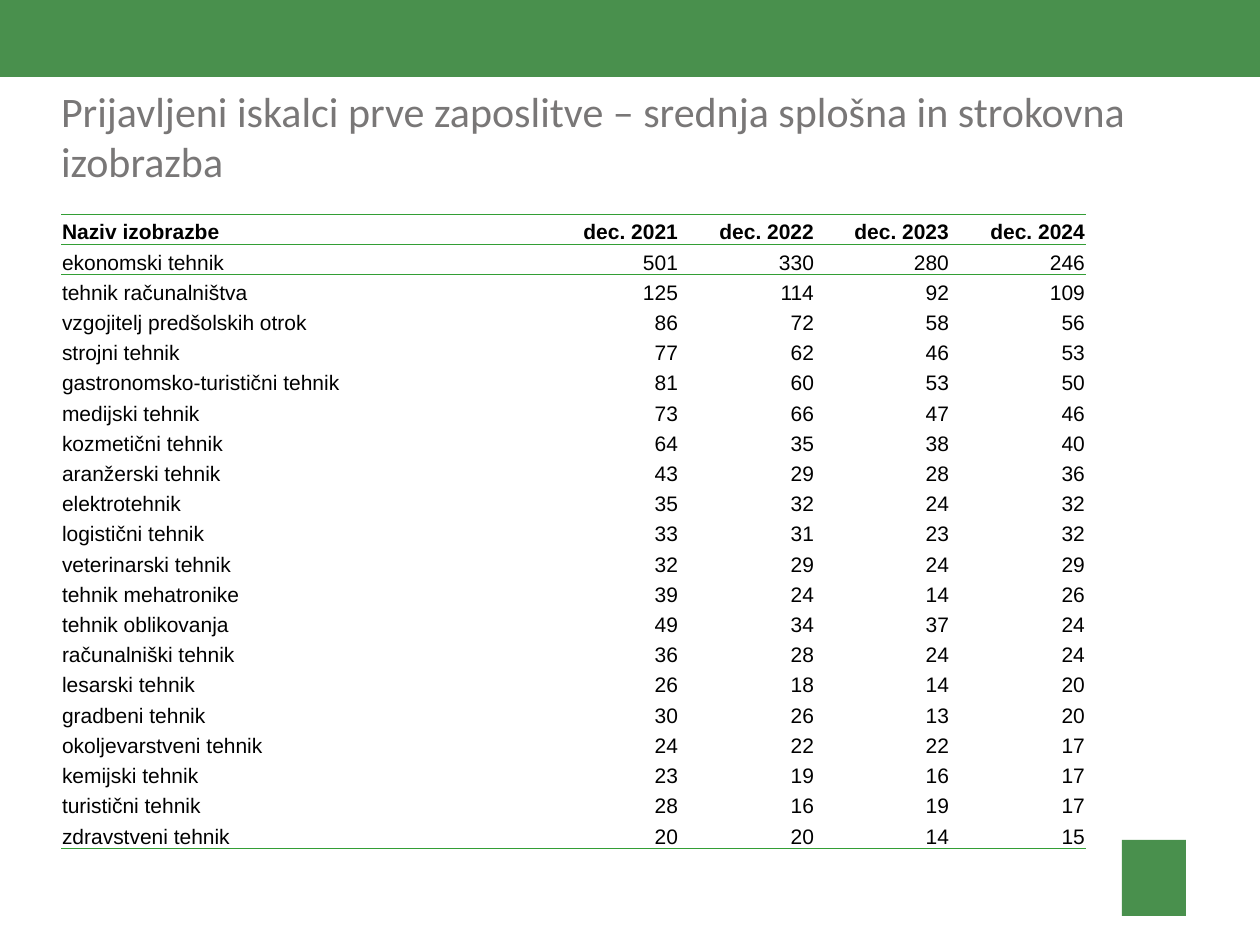
from lxml import etree
from pptx import Presentation, util as u
from pptx.dml.color import RGBColor
from pptx.enum import shapes, text
from pptx.oxml import ns

SCALE = 914400 / 126
GREEN, RULE, GREY, BLACK = "49904D", "339E35", "797777", "000000"
PLAIN_TABLE = "{2D5ABB26-0587-4C30-8999-92F81FD0307C}"

HEADER = ["Naziv izobrazbe", "dec. 2021", "dec. 2022", "dec. 2023", "dec. 2024"]
SEEKERS = [
    ("ekonomski tehnik", 501, 330, 280, 246),
    ("tehnik računalništva", 125, 114, 92, 109),
    ("vzgojitelj predšolskih otrok", 86, 72, 58, 56),
    ("strojni tehnik", 77, 62, 46, 53),
    ("gastronomsko-turistični tehnik", 81, 60, 53, 50),
    ("medijski tehnik", 73, 66, 47, 46),
    ("kozmetični tehnik", 64, 35, 38, 40),
    ("aranžerski tehnik", 43, 29, 28, 36),
    ("elektrotehnik", 35, 32, 24, 32),
    ("logistični tehnik", 33, 31, 23, 32),
    ("veterinarski tehnik", 32, 29, 24, 29),
    ("tehnik mehatronike", 39, 24, 14, 26),
    ("tehnik oblikovanja", 49, 34, 37, 24),
    ("računalniški tehnik", 36, 28, 24, 24),
    ("lesarski tehnik", 26, 18, 14, 20),
    ("gradbeni tehnik", 30, 26, 13, 20),
    ("okoljevarstveni tehnik", 24, 22, 22, 17),
    ("kemijski tehnik", 23, 19, 16, 17),
    ("turistični tehnik", 28, 16, 19, 17),
    ("zdravstveni tehnik", 20, 20, 14, 15),
]


def px(*lengths):
    return [u.Emu(round(length * SCALE)) for length in lengths]


def color(value):
    return RGBColor.from_string(value)


class SlideBuilder:
    def __init__(self, slide):
        self.slide = slide

    def block(self, kind, box, fill):
        block = self.slide.shapes.add_shape(kind, *px(*box))
        block.shadow.inherit = False
        block.fill.solid()
        block.fill.fore_color.rgb = color(fill)
        block.line.fill.background()

    def run(self, paragraph, wording, font, size, tint, bold=False):
        run = paragraph.add_run()
        run.text = wording
        run.font.name, run.font.size, run.font.bold = font, u.Pt(size), bold
        run.font.color.rgb = color(tint)

    def title(self, box, wording):
        frame = self.slide.shapes.add_textbox(*px(*box)).text_frame
        frame.word_wrap = True
        frame.vertical_anchor = text.MSO_ANCHOR.MIDDLE
        frame.margin_left = frame.margin_right = 0
        frame.margin_top = frame.margin_bottom = 0
        self.run(frame.paragraphs[0], wording, "Calibri", 24, GREY)

    def borders(self, cell, widths):
        properties = cell._tc.get_or_add_tcPr()
        for position, (side, points) in enumerate(widths.items()):
            line = etree.Element(ns.qn(f"a:{side}"), w=str(u.Pt(points)))
            fill = etree.SubElement(line, ns.qn("a:solidFill"))
            etree.SubElement(fill, ns.qn("a:srgbClr"), val=RULE)
            properties.insert(position, line)

    def cell(self, cell, wording, bold, numeric, widths):
        cell.fill.background()
        cell.vertical_anchor = text.MSO_ANCHOR.BOTTOM
        cell.margin_left, cell.margin_right, cell.margin_top = px(1, 1, 1)
        cell.margin_bottom = 0
        paragraph = cell.text_frame.paragraphs[0]
        paragraph.alignment = text.PP_ALIGN.RIGHT if numeric else text.PP_ALIGN.LEFT
        self.run(paragraph, wording, "Arial", 12, BLACK, bold)
        self.borders(cell, widths)

    def table(self, box, column_widths, rows):
        frame = self.slide.shapes.add_table(len(rows), len(column_widths), *px(*box))
        table = frame.table
        table.first_row = table.horz_banding = False
        table._tbl.tblPr.find(ns.qn("a:tableStyleId")).text = PLAIN_TABLE
        for column, width in zip(table.columns, px(*column_widths)):
            column.width = width
        rules = {0: {"lnT": 0.5, "lnB": 0.5}, 1: {"lnT": 0.5}, len(rows) - 1: {"lnB": 1}}
        for r, row in enumerate(rows):
            for c, value in enumerate(row):
                self.cell(table.cell(r, c), str(value), r == 0, c > 0, rules.get(r, {}))


def main():
    deck = Presentation()
    deck.slide_width, deck.slide_height = px(1260, 945)
    page = SlideBuilder(deck.slides.add_slide(deck.slide_layouts[6]))
    page.block(shapes.MSO_SHAPE.RECTANGLE, (0, -1, 1260, 78), GREEN)
    page.block(shapes.MSO_SHAPE.RECTANGLE, (1122, 840, 64, 76), GREEN)
    page.title(
        (61, 86, 1167, 100),
        "Prijavljeni iskalci prve zaposlitve – srednja splošna in strokovna izobrazba",
    )
    page.table((61, 214, 1025, 635), (483, 135, 136, 135, 136), [HEADER, *SEEKERS])
    deck.save("out.pptx")


if __name__ == "__main__":
    main()
